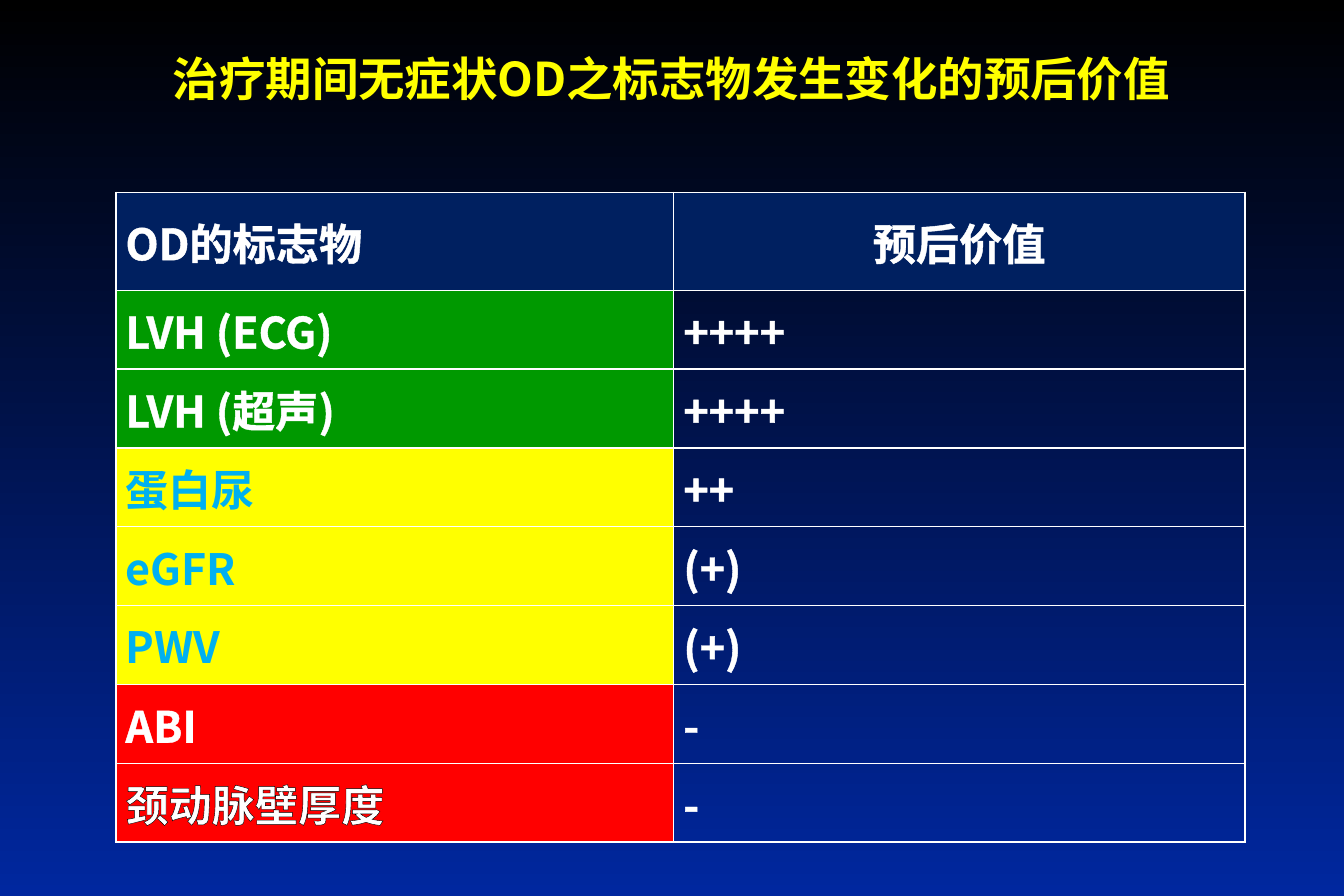
"""Build the slide on the prognostic value of changes in markers of asymptomatic OD."""
from lxml import etree
from pptx import Presentation
from pptx.dml.color import RGBColor
from pptx.enum.text import MSO_ANCHOR, PP_ALIGN
from pptx.oxml.ns import qn
from pptx.util import Inches, Pt

LEFT, CENTER = PP_ALIGN.LEFT, PP_ALIGN.CENTER
MIDDLE = MSO_ANCHOR.MIDDLE

TITLE = "治疗期间无症状OD之标志物发生变化的预后价值"
HEADER = ("OD的标志物", "预后价值")
MARKERS = [
    ("LVH (ECG)", "++++", "strong"),
    ("LVH (超声)", "++++", "strong"),
    ("蛋白尿", "++", "moderate"),
    ("eGFR", "(+)", "moderate"),
    ("PWV", "(+)", "moderate"),
    ("ABI", "-", "none"),
    ("颈动脉壁厚度", "-", "none"),
]
DARK_OUTLINED = "颈动脉壁厚度"

THEME = {
    "font": "Noto Sans CJK SC",
    "title_size": 28,
    "cell_size": 26,
    "title": "FFFF00",
    "text": "FFFFFF",
    "dark": "000000",
    "background": ("000000", "00279F"),
    "header": "002060",
    "border": "FFFFFF",
    "fill": {"strong": "009900", "moderate": "FFFF00", "none": "FF0000"},
    "marker": {"strong": "FFFFFF", "moderate": "00B0F0", "none": "FFFFFF"},
}
COL_WIDTHS = (4.67, 4.78)
HEADER_HEIGHT, ROW_HEIGHT = 0.82, 0.66


def make_line(tag, color, width):
    """Return a solid line element."""
    ln = etree.Element(qn(tag), w=str(Pt(width)))
    solid = etree.SubElement(ln, qn("a:solidFill"))
    etree.SubElement(solid, qn("a:srgbClr"), val=color)
    return ln


def write(tf, text, size, color, align=LEFT, outline=None):
    """Write one bold line of text in a text frame."""
    tf.word_wrap = True
    p = tf.paragraphs[0]
    p.alignment = align
    r = p.add_run()
    r.text = text
    r.font.size = Pt(size)
    r.font.bold = True
    r.font.color.rgb = RGBColor.from_string(color)
    r.font.name = THEME["font"]
    rpr = r.font._element
    etree.SubElement(rpr, qn("a:ea"), typeface=THEME["font"])
    if outline:
        rpr.insert(0, make_line("a:ln", outline, 0.75))


def fill_cell(cell, text, fill=None, color=THEME["text"], align=LEFT, outline=THEME["text"]):
    """Format one table cell and write its text."""
    cell.vertical_anchor = MIDDLE
    cell.margin_left = cell.margin_right = Inches(0.08)
    cell.margin_top = cell.margin_bottom = Inches(0.05)
    if fill:
        cell.fill.solid()
        cell.fill.fore_color.rgb = RGBColor.from_string(fill)
    else:
        cell.fill.background()
    tcpr = cell._tc.get_or_add_tcPr()
    for i, side in enumerate("LRTB"):
        tcpr.insert(i, make_line(f"a:ln{side}", THEME["border"], 1))
    write(cell.text_frame, text, THEME["cell_size"], color, align, outline)


def add_marker_table(s):
    """Add the table of markers and their prognostic value."""
    rows = len(MARKERS) + 1
    height = HEADER_HEIGHT + ROW_HEIGHT * len(MARKERS)
    table = s.shapes.add_table(rows, len(HEADER), Inches(0.97), Inches(1.61),
                               Inches(sum(COL_WIDTHS)), Inches(height)).table
    table.first_row = table.horz_banding = False
    for col, width in zip(table.columns, COL_WIDTHS):
        col.width = Inches(width)
    for i, row in enumerate(table.rows):
        row.height = Inches(ROW_HEIGHT if i else HEADER_HEIGHT)
    for j, (text, align) in enumerate(zip(HEADER, (LEFT, CENTER))):
        fill_cell(table.cell(0, j), text, fill=THEME["header"], align=align)
    for i, (marker, value, level) in enumerate(MARKERS, 1):
        outline = THEME["dark"] if marker == DARK_OUTLINED else THEME["text"]
        fill_cell(table.cell(i, 0), marker, fill=THEME["fill"][level],
                  color=THEME["marker"][level], outline=outline)
        fill_cell(table.cell(i, 1), value)


def main():
    """Build and save the slide."""
    prs = Presentation()
    prs.slide_width, prs.slide_height = Inches(11.25), Inches(7.5)
    s = prs.slides.add_slide(prs.slide_layouts[6])
    bg = s.background.fill
    bg.gradient()
    bg.gradient_angle = 270
    for stop, color in zip(bg.gradient_stops, THEME["background"]):
        stop.color.rgb = RGBColor.from_string(color)
    tf = s.shapes.add_textbox(Inches(0.84), Inches(0.26), Inches(9.56), Inches(0.78)).text_frame
    tf.vertical_anchor = MIDDLE
    write(tf, TITLE, THEME["title_size"], THEME["title"], align=CENTER)
    add_marker_table(s)
    prs.save("out.pptx")


if __name__ == "__main__":
    main()
